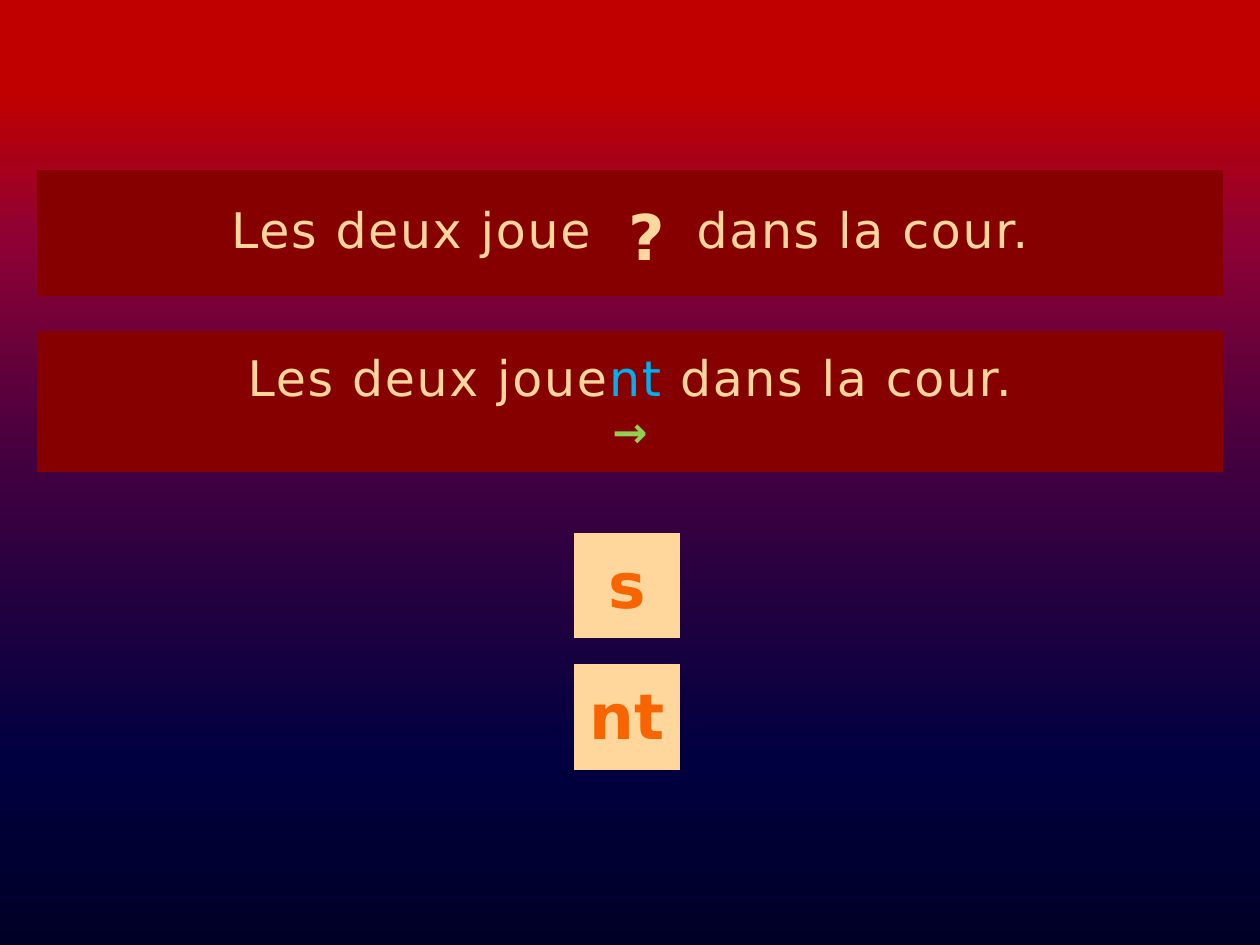
from dataclasses import dataclass

from lxml import etree
from pptx import Presentation
from pptx import util as u
from pptx.dml.color import RGBColor
from pptx.enum import shapes, text
from pptx.oxml import ns


@dataclass(frozen=True)
class Theme:
    font: str = "DejaVu Sans"
    bar: str = "860000"
    cream: str = "FFD79D"
    orange: str = "F86400"
    blue: str = "00B0F0"
    green: str = "92D050"
    # Backdrop stops, from bottom to top
    fade: tuple = ((0, "000026"), (20, "000040"), (50, "400040"),
                   (75, "8F0134"), (90, "C00000"))
    body: float = 28
    mark: float = 36
    arrow: float = 24


@dataclass(frozen=True)
class Box:
    """Place, fill and top and bottom insets, with lengths in centimetres."""
    left: float
    top: float
    width: float
    height: float
    fill: str = ""
    above: float = 0.1
    below: float = 0.2


T = Theme()
WIDE, HIGH = 25.4, 19.05
EDGE = 0.74
SPAN = WIDE - 2 * EDGE
TILE, STEP = 2.13, 2.65


def draw_box(slide, box: Box):
    """Add a plain block with centred text that does not wrap."""
    shape = slide.shapes.add_shape(
        shapes.MSO_SHAPE.ACTION_BUTTON_CUSTOM,
        u.Cm(box.left), u.Cm(box.top), u.Cm(box.width), u.Cm(box.height))
    shape.shadow.inherit = False
    shape.line.fill.background()
    if box.fill:
        shape.fill.solid()
        shape.fill.fore_color.rgb = RGBColor.from_string(box.fill)
    frame = shape.text_frame
    frame.word_wrap = False
    frame.vertical_anchor = text.MSO_ANCHOR.MIDDLE
    frame.margin_left = frame.margin_right = u.Cm(0.25)
    frame.margin_top, frame.margin_bottom = u.Cm(box.above), u.Cm(box.below)
    frame.paragraphs[0].alignment = text.PP_ALIGN.CENTER
    return shape


def write(para, words: str, *, size: float = T.body, color: str = T.cream,
          bold: bool = False, space: float = 0) -> None:
    """Append one run; space is the letter spacing in points."""
    run = para.add_run()
    run.text = words
    font = run.font
    font.name, font.size, font.bold = T.font, u.Pt(size), bold
    font.color.rgb = RGBColor.from_string(color)
    if space:
        run._r.get_or_add_rPr().set("spc", str(round(space * 100)))


def draw_mark(slide, box: Box, words: str, color: str) -> None:
    """Add a block that holds one large bold mark."""
    para = draw_box(slide, box).text_frame.paragraphs[0]
    write(para, words, size=T.mark, color=color, bold=True)


def draw_fade(slide) -> None:
    """Fill the slide with the vertical gradient."""
    fill = draw_box(slide, Box(0, 0, WIDE, HIGH)).fill
    fill.gradient()
    fill.gradient_angle = 90
    stops = fill._fill._gradFill.find(ns.qn("a:gsLst"))
    for old in list(stops):
        stops.remove(old)
    for spot, color in T.fade:
        stop = etree.SubElement(stops, ns.qn("a:gs"), pos=str(spot * 1000))
        etree.SubElement(stop, ns.qn("a:srgbClr"), val=color)


def main() -> None:
    deck = Presentation()
    deck.slide_width, deck.slide_height = u.Cm(WIDE), u.Cm(HIGH)
    slide = deck.slides.add_slide(deck.slide_layouts[6])
    draw_fade(slide)

    # Question, with one wide space under the question mark
    ask = Box(EDGE, 3.43, SPAN, 2.54, T.bar, above=0.05)
    para = draw_box(slide, ask).text_frame.paragraphs[0]
    for words, space in (("Les deux joue", 1), (" ", 50.5),
                         ("dans la cour.", 1)):
        write(para, words, space=space)
    draw_mark(slide, Box(11.99, 3.73, 2.11, TILE, T.bar), "?", T.cream)

    # Choice of endings
    for row, words in enumerate(("s", "nt")):
        tile = Box(11.58, 10.74 + row * STEP, TILE, TILE, T.cream)
        draw_mark(slide, tile, words, T.orange)

    # Answer, with the ending picked out and an arrow below
    reply = Box(EDGE, 6.68, SPAN, 2.84, T.bar, below=0.1)
    frame = draw_box(slide, reply).text_frame
    para = frame.paragraphs[0]
    for words, color in (("Les deux joue", T.cream), ("nt", T.blue),
                         (" dans la cour.", T.cream)):
        write(para, words, color=color, space=1)
    para = frame.add_paragraph()
    para.alignment = text.PP_ALIGN.CENTER
    para.space_after = u.Pt(6)
    write(para, "→", size=T.arrow, color=T.green, bold=True, space=1)

    deck.save("out.pptx")


if __name__ == "__main__":
    main()
